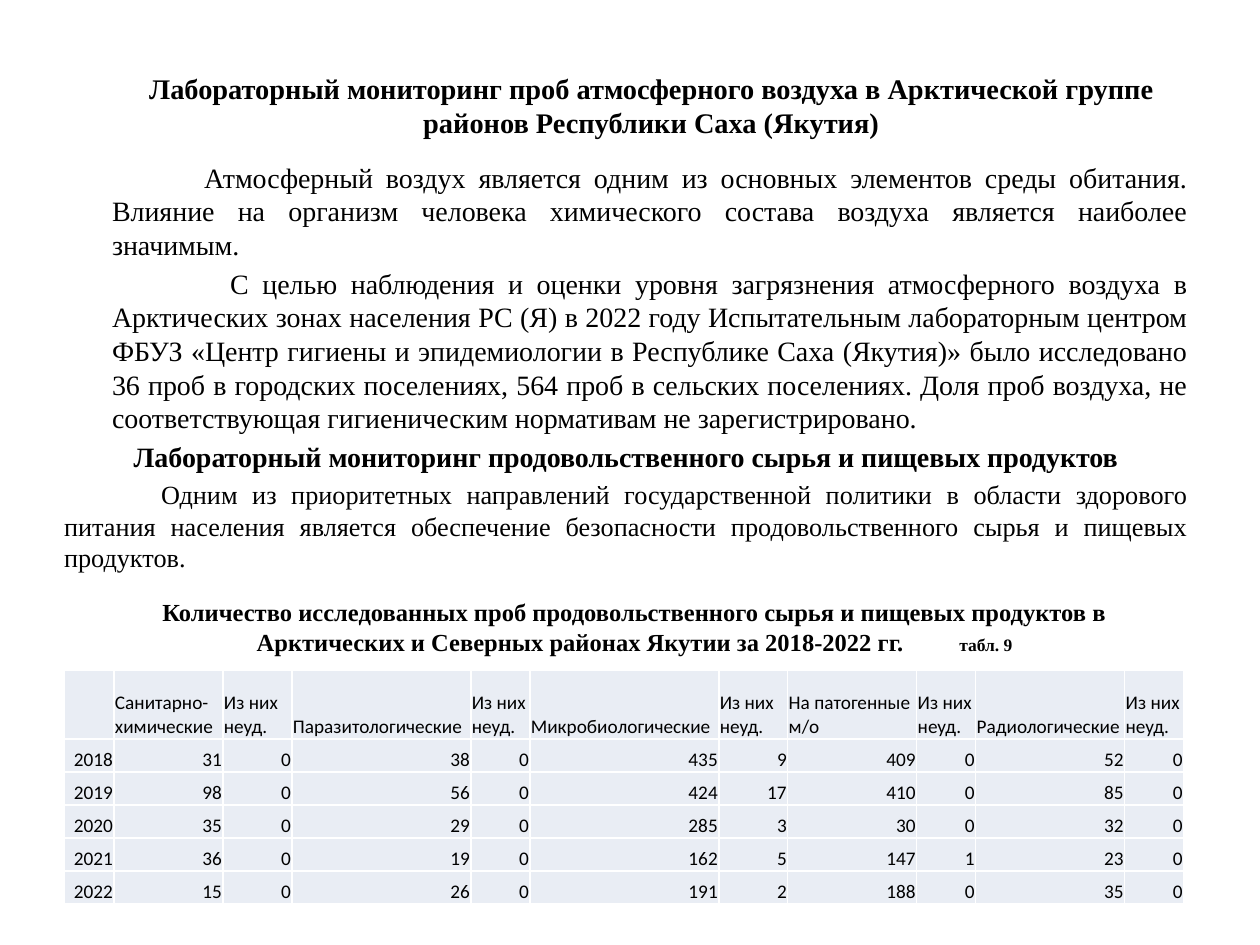
import pptx
import pptx.dml.color
import pptx.enum.text
import pptx.oxml.ns
import pptx.util
from dataclasses import dataclass
from lxml import etree

PX = 914400 // 126
ALIGN = pptx.enum.text.PP_ALIGN
ANCHOR = pptx.enum.text.MSO_ANCHOR


@dataclass(frozen=True)
class Theme:
    serif: str = "Times New Roman"
    sans: str = "Calibri"
    ink: str = "000000"
    cell: str = "E9EDF4"
    rule: str = "FFFFFF"
    title: float = 16.2
    body: int = 16
    small: int = 15
    caption: int = 14
    number: int = 10
    table: int = 11


theme = Theme()


def write(para, text, size, font=theme.serif, bold=False, align=None,
          before=0, margin=0, indent=0, tracking=0):
    """Add a span to a paragraph; a vertical tab in the text is a line break."""
    if align is not None:
        para.alignment = align
        para.space_before = pptx.util.Pt(before)
        settings = para._p.get_or_add_pPr()
        settings.set("marL", str(margin * PX))
        settings.set("indent", str(indent * PX))
    for index, line in enumerate(text.split("\v")):
        if index:
            para.add_line_break()
        span = para.add_run()
        span.text = line
        span.font.name = font
        span.font.size = pptx.util.Pt(size)
        span.font.bold = bold
        span.font.color.rgb = pptx.dml.color.RGBColor.from_string(theme.ink)
        if tracking:
            span._r.get_or_add_rPr().set("spc", str(tracking * 100))


deck = pptx.Presentation()
deck.slide_width = 1260 * PX
deck.slide_height = 945 * PX
page = deck.slides.add_slide(deck.slide_layouts[5])

# Title, raised within its box by a deep bottom inset
title = page.shapes.title
title.left, title.top, title.width, title.height = (
    n * PX for n in (84, 66, 1134, 157))
frame = title.text_frame
frame.auto_size = pptx.enum.text.MSO_AUTO_SIZE.NONE
frame.vertical_anchor = ANCHOR.MIDDLE
frame.margin_bottom = 84 * PX
write(frame.paragraphs[0],
      "Лабораторный мониторинг проб атмосферного воздуха в Арктической группе "
      "районов Республики Саха (Якутия)",
      theme.title, bold=True, align=ALIGN.CENTER)

# Body text
body = [
    ("Атмосферный воздух является одним из основных элементов среды обитания. "
     "Влияние на организм человека химического состава воздуха является "
     "наиболее значимым.",
     dict(size=theme.body, align=ALIGN.JUSTIFY, margin=48, indent=92)),
    ("С целью наблюдения и оценки уровня загрязнения атмосферного воздуха в "
     "Арктических зонах населения РС (Я) в 2022 году Испытательным "
     "лабораторным центром ФБУЗ «Центр гигиены и эпидемиологии в Республике "
     "Саха (Якутия)» было исследовано 36 проб в городских поселениях, 564 "
     "проб в сельских поселениях. Доля проб воздуха, не соответствующая "
     "гигиеническим нормативам не зарегистрировано.",
     dict(size=theme.body, align=ALIGN.JUSTIFY, margin=48, indent=118)),
    ("Лабораторный мониторинг продовольственного сырья и пищевых продуктов",
     dict(size=theme.body, align=ALIGN.CENTER, bold=True)),
    ("Одним из приоритетных направлений государственной политики в области "
     "здорового\vпитания населения является обеспечение безопасности "
     "продовольственного сырья и пищевых продуктов.",
     dict(size=theme.small, align=ALIGN.JUSTIFY, indent=97)),
]
box = page.shapes.add_textbox(54 * PX, 155 * PX, 1144 * PX, 514 * PX)
frame = box.text_frame
frame.word_wrap = True
frame.margin_left = frame.margin_right = 10 * PX
frame.margin_top = 5 * PX
for index, (text, style) in enumerate(body):
    para = frame.add_paragraph() if index else frame.paragraphs[0]
    write(para, text, before=0.2 * style["size"], **style)

# Table caption, with one widely tracked space before the table number
box = page.shapes.add_textbox(74 * PX, 591 * PX, 1121 * PX, 72 * PX)
box.text_frame.word_wrap = True
para = box.text_frame.paragraphs[0]
write(para,
      "Количество исследованных проб продовольственного сырья и пищевых "
      "продуктов в Арктических и Северных районах Якутии за 2018-2022 гг.",
      theme.caption, bold=True, align=ALIGN.CENTER)
write(para, " ", theme.caption, bold=True, tracking=28)
write(para, "табл. 9", theme.number, bold=True)

# Table of samples by year
failed = "Из них неуд."
rows = [
    ("", "Санитарно-химические", failed, "Паразитологические", failed,
     "Микробиологические", failed, "На патогенные м/о", failed,
     "Радиологические", failed),
    (2018, 31, 0, 38, 0, 435, 9, 409, 0, 52, 0),
    (2019, 98, 0, 56, 0, 424, 17, 410, 0, 85, 0),
    (2020, 35, 0, 29, 0, 285, 3, 30, 0, 32, 0),
    (2021, 36, 0, 19, 0, 162, 5, 147, 1, 23, 0),
    (2022, 15, 0, 26, 0, 191, 2, 188, 0, 35, 0),
]
widths = [50, 109, 69, 179, 59, 189, 69, 129, 59, 149, 59]
heights = [69] + [33] * 5
table = page.shapes.add_table(
    len(rows), len(widths), 64 * PX, 670 * PX,
    sum(widths) * PX, sum(heights) * PX).table
for column, width in zip(table.columns, widths):
    column.width = width * PX
for row, height in zip(table.rows, heights):
    row.height = height * PX

for row_index, values in enumerate(rows):
    for column_index, value in enumerate(values):
        cell = table.cell(row_index, column_index)
        cell.vertical_anchor = ANCHOR.BOTTOM
        cell.margin_left = cell.margin_right = cell.margin_top = PX
        cell.margin_bottom = 0
        # Borders come before the fill in the cell properties
        properties = cell._tc.get_or_add_tcPr()
        for side in ("lnL", "lnR", "lnT", "lnB"):
            line = etree.SubElement(
                properties, pptx.oxml.ns.qn("a:" + side), w="12700")
            solid = etree.SubElement(line, pptx.oxml.ns.qn("a:solidFill"))
            etree.SubElement(
                solid, pptx.oxml.ns.qn("a:srgbClr"), val=theme.rule)
        cell.fill.solid()
        cell.fill.fore_color.rgb = pptx.dml.color.RGBColor.from_string(theme.cell)
        if value != "":
            write(cell.text_frame.paragraphs[0], str(value), theme.table,
                  font=theme.sans,
                  align=ALIGN.RIGHT if row_index else ALIGN.LEFT)

deck.save("out.pptx")
